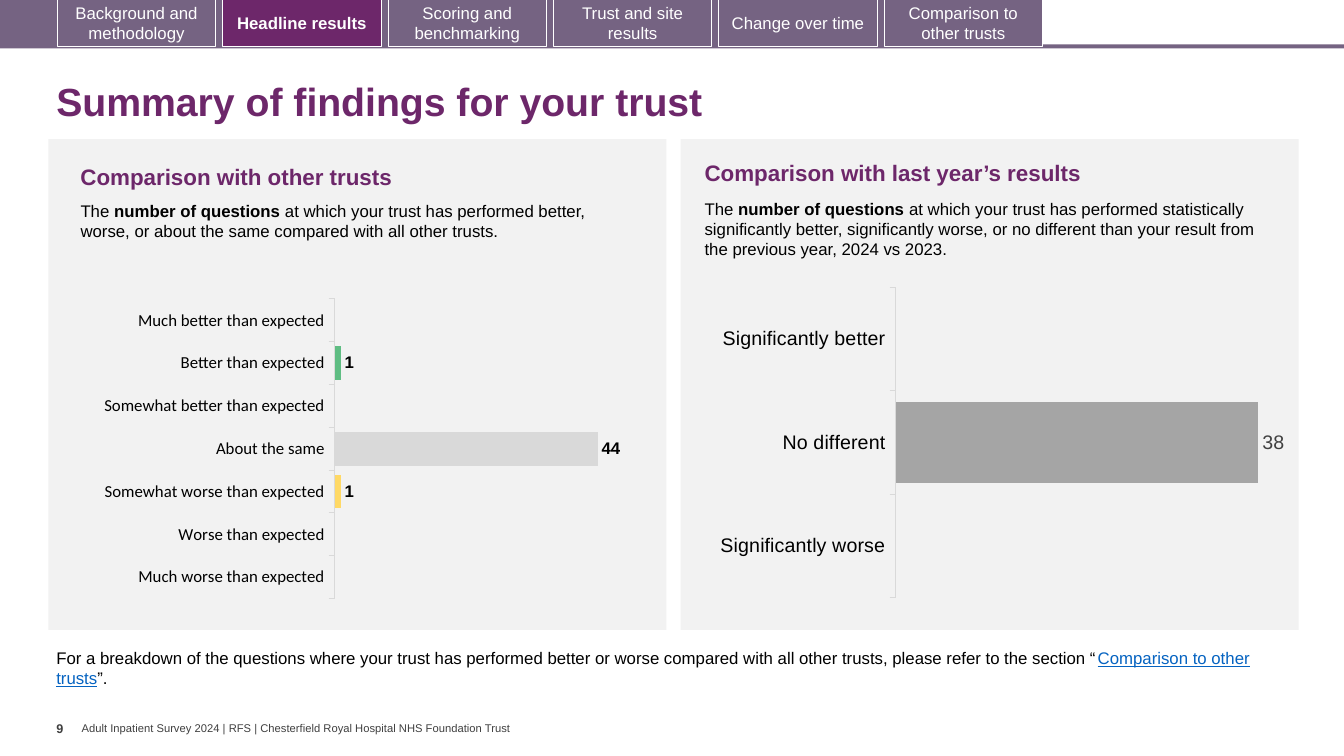
from dataclasses import dataclass

from lxml import etree
from pptx import Presentation
from pptx import util as u
from pptx.chart.data import CategoryChartData
from pptx.dml.color import RGBColor
from pptx.enum import chart as ch, shapes, text
from pptx.oxml import parse_xml
from pptx.oxml.ns import nsdecls, qn


@dataclass(frozen=True)
class Theme:
    font: str = "Arial"
    chart_font: str = "Calibri"
    plum: str = "6D276A"
    mauve: str = "756382"
    panel: str = "F2F2F2"
    white: str = "FFFFFF"
    black: str = "000000"
    grey: str = "404040"
    axis: str = "D9D9D9"
    link: str = "0563C1"
    series: str = "4472C4"
    title: int = 28
    heading: int = 16
    large_label: int = 14
    body: int = 12
    page: int = 9
    footer: int = 8


THEME = Theme()


def rgb(value):
    return RGBColor.from_string(value)


def inches(box):
    return [u.Inches(length) for length in box]


def style_font(font, size, color, bold=False, name=THEME.font, underline=None):
    font.name, font.size, font.bold = name, u.Pt(size), bold
    font.color.rgb = rgb(color)
    font.underline = underline


def write_text(frame, runs, size=THEME.body, color=THEME.black, bold=False,
               align=None, anchor=text.MSO_ANCHOR.TOP, spacing=None,
               margins=None, wrap=True):
    """Runs are plain strings or (string, font overrides) pairs."""
    frame.word_wrap = wrap
    frame.vertical_anchor = anchor
    if margins:
        (frame.margin_left, frame.margin_top,
         frame.margin_right, frame.margin_bottom) = inches(margins)
    paragraph = frame.paragraphs[0]
    paragraph.alignment = align
    paragraph.line_spacing = spacing
    for part in runs:
        words, changes = (part, {}) if isinstance(part, str) else part
        run = paragraph.add_run()
        run.text = words
        style_font(run.font, **{"size": size, "color": color, "bold": bold, **changes})


def add_text(slide, box, *runs, **format):
    write_text(slide.shapes.add_textbox(*inches(box)).text_frame, runs, **format)


def add_rect(slide, box, fill=None, outline=None):
    rect = slide.shapes.add_shape(shapes.MSO_SHAPE.RECTANGLE, *inches(box))
    rect.shadow.inherit = False
    if fill:
        rect.fill.solid()
        rect.fill.fore_color.rgb = rgb(fill)
    else:
        rect.fill.background()
    if outline:
        rect.line.color.rgb = rgb(outline)
        rect.line.width = u.Pt(0.75)
    else:
        rect.line.fill.background()
    return rect


def navigation(slide, box, sections, current):
    left, top, width, height = box
    add_rect(slide, (left, top + 0.44, width, 0.04), THEME.mauve)
    add_rect(slide, (left, top, 10.37, height), THEME.mauve)
    for index, section in enumerate(sections):
        active = section == current
        tab = add_rect(slide, (left + 0.6 + index * 1.64, top - 0.01, 1.57, height),
                       THEME.plum if active else None, THEME.white)
        write_text(tab.text_frame, [section], color=THEME.white, bold=active,
                   align=text.PP_ALIGN.CENTER, anchor=text.MSO_ANCHOR.MIDDLE)


def place_plot(chart, plot_box):
    """Clear the chart background and fix the inner plot area."""
    chart.element.find(qn("c:chart")).addnext(parse_xml(
        f'<c:spPr {nsdecls("c", "a")}><a:noFill/><a:ln><a:noFill/></a:ln></c:spPr>'))
    area = chart.element.find(".//" + qn("c:plotArea"))
    for old in area.findall(qn("c:layout")):
        area.remove(old)
    layout = parse_xml(f'<c:layout {nsdecls("c")}><c:manualLayout/></c:layout>')
    settings = [("layoutTarget", "inner"), ("xMode", "edge"), ("yMode", "edge"),
                *zip("xywh", plot_box)]
    for tag, value in settings:
        etree.SubElement(layout[0], qn(f"c:{tag}")).set("val", str(value))
    area.insert(0, layout)


def bar_chart(slide, box, rows, maximum, plot_box, axis_font, label_font):
    """Rows are (category, count, colour)."""
    categories, counts, colors = zip(*rows)
    data = CategoryChartData(number_format="0")
    data.categories = categories
    data.add_series("Series 1", counts)
    chart = slide.shapes.add_chart(ch.XL_CHART_TYPE.BAR_CLUSTERED, *inches(box), data).chart
    chart.has_legend = chart.has_title = False
    style_font(chart.font, **axis_font)
    place_plot(chart, plot_box)

    # Axes
    names, values = chart.category_axis, chart.value_axis
    names.reverse_order = True
    names.has_major_gridlines = values.has_major_gridlines = False
    names.major_tick_mark = ch.XL_TICK_MARK.OUTSIDE
    names.format.line.color.rgb = rgb(THEME.axis)
    names.format.line.width = u.Pt(0.75)
    style_font(names.tick_labels.font, **axis_font)
    values.minimum_scale, values.maximum_scale = 0, maximum
    values.visible = False

    # Bars and their labels
    plot = chart.plots[0]
    plot.gap_width, plot.vary_by_categories = 27, False
    bars = plot.series[0]
    bars.format.fill.solid()
    bars.format.fill.fore_color.rgb = rgb(THEME.series)
    for index, color in enumerate(colors):
        fill = bars.points[index].format.fill
        fill.solid()
        fill.fore_color.rgb = rgb(color)
    labels = bars.data_labels
    labels.show_value = True
    labels.position = ch.XL_LABEL_POSITION.OUTSIDE_END
    labels.number_format, labels.number_format_is_linked = "0", False
    style_font(labels.font, **label_font)


def findings_panel(slide, box, heading, explanation, inset, body_drop, body_width,
                   chart_box, **chart_settings):
    left, top, width, height = box
    add_rect(slide, box, THEME.panel)
    x, y = left + inset[0], top + inset[1]
    add_text(slide, (x, y, 5.5, 0.37), heading,
             size=THEME.heading, color=THEME.plum, bold=True)
    add_text(slide, (x, y + body_drop, body_width, 0.71),
             "The ", ("number of questions ", {"bold": True}), explanation)
    dx, dy, chart_width, chart_height = chart_box
    bar_chart(slide, (left + dx, top + dy, chart_width, chart_height), **chart_settings)


def footer(slide, box, page, source):
    left, top, width, height = box
    add_text(slide, (left + 0.25, top + 0.06, width, 0.13), source, size=THEME.footer,
             color=THEME.grey, anchor=text.MSO_ANCHOR.MIDDLE, margins=(0, 0, 0, 0))
    add_text(slide, (left, top, 0.25, height), page, size=THEME.page, color=THEME.grey,
             bold=True, margins=(0, 0.05, 0, 0.05), wrap=False)


def main():
    deck = Presentation()
    deck.slide_width, deck.slide_height = u.Inches(13.33), u.Inches(7.5)
    slide = deck.slides.add_slide(deck.slide_layouts[6])

    navigation(slide, (-0.03, 0, 13.36, 0.47),
               ["Background and methodology", "Headline results",
                "Scoring and benchmarking", "Trust and site results",
                "Change over time", "Comparison to other trusts"],
               current="Headline results")
    add_text(slide, (0.46, 0.67, 12.49, 0.72), "Summary of findings for your trust",
             size=THEME.title, color=THEME.plum, bold=True,
             anchor=text.MSO_ANCHOR.MIDDLE, spacing=0.9)

    findings_panel(
        slide, (0.48, 1.38, 6.13, 4.87), "Comparison with other trusts",
        "at which your trust has performed better, worse, or about the same "
        "compared with all other trusts.",
        inset=(0.22, 0.19), body_drop=0.37, body_width=5.29,
        chart_box=(-0.07, 1.34, 6.23, 3.41), plot_box=(0.467, 0.072, 0.476, 0.872),
        rows=[("Much better than expected", None, "419999"),
              ("Better than expected", 1, "5FBD83"),
              ("Somewhat better than expected", None, "A9D18E"),
              ("About the same", 44, "D9D9D9"),
              ("Somewhat worse than expected", 1, "FFD966"),
              ("Worse than expected", None, "F1BE48"),
              ("Much worse than expected", None, "E87722")],
        maximum=50,
        axis_font=dict(size=THEME.body, color=THEME.black, name=THEME.chart_font),
        label_font=dict(size=THEME.body, color=THEME.black, bold=True))
    findings_panel(
        slide, (6.75, 1.38, 6.13, 4.87), "Comparison with last year’s results",
        "at which your trust has performed statistically significantly better, "
        "significantly worse, or no different than your result from the previous "
        "year, 2024 vs 2023.",
        inset=(0.14, 0.15), body_drop=0.39, body_width=5.74,
        chart_box=(-0.11, 1.35, 6.23, 3.39), plot_box=(0.36, 0.035, 0.608, 0.909),
        rows=[("Significantly better", None, "9DC3E6"),
              ("No different", 38, "A5A5A5"),
              ("Significantly worse", None, "7030A0")],
        maximum=40,
        axis_font=dict(size=THEME.large_label, color=THEME.black),
        label_font=dict(size=THEME.large_label, color=THEME.grey))

    add_text(slide, (0.46, 6.38, 12.21, 0.5),
             "For a breakdown of the questions where your trust has performed better or "
             "worse compared with all other trusts, please refer to the section “",
             ("Comparison to other trusts", {"color": THEME.link, "underline": True}), "”.")
    footer(slide, (0.56, 7.1, 6.1, 0.4), "9",
           "Adult Inpatient Survey 2024 | RFS | Chesterfield Royal Hospital NHS Foundation Trust")
    deck.save("out.pptx")


if __name__ == "__main__":
    main()
